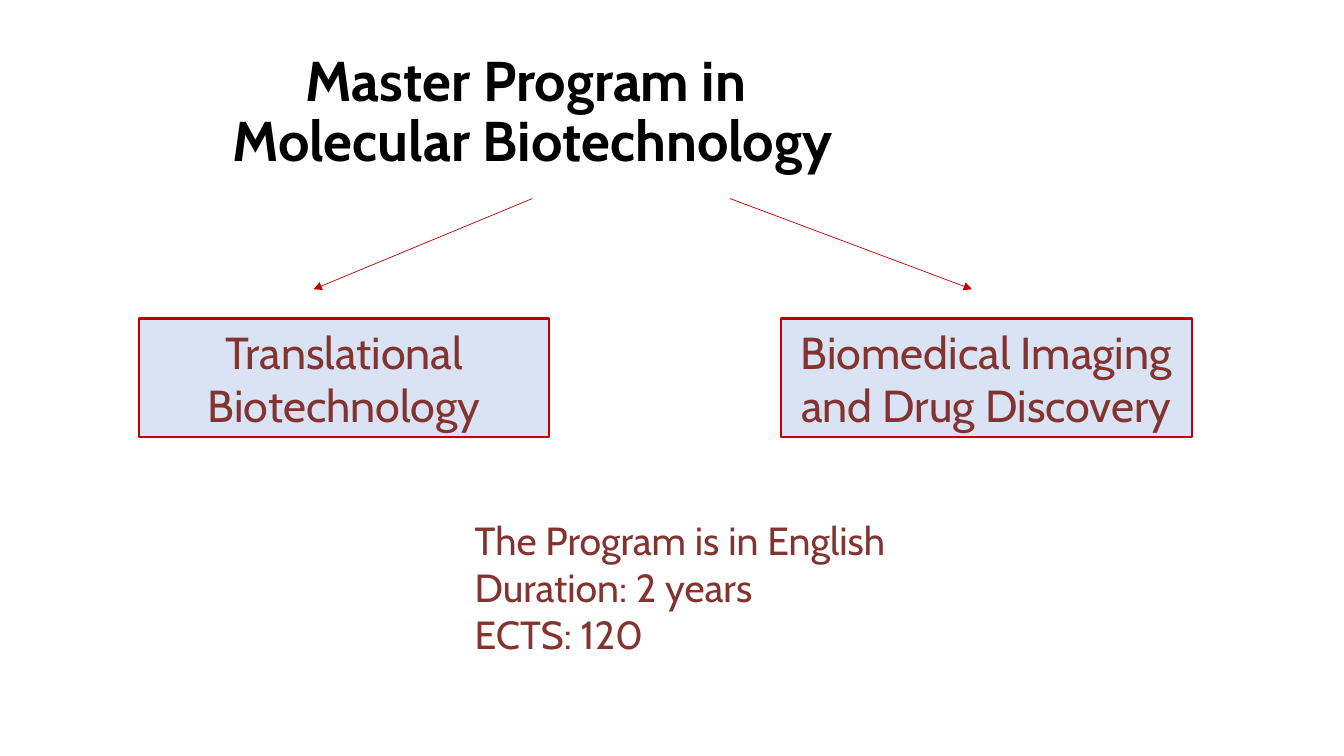
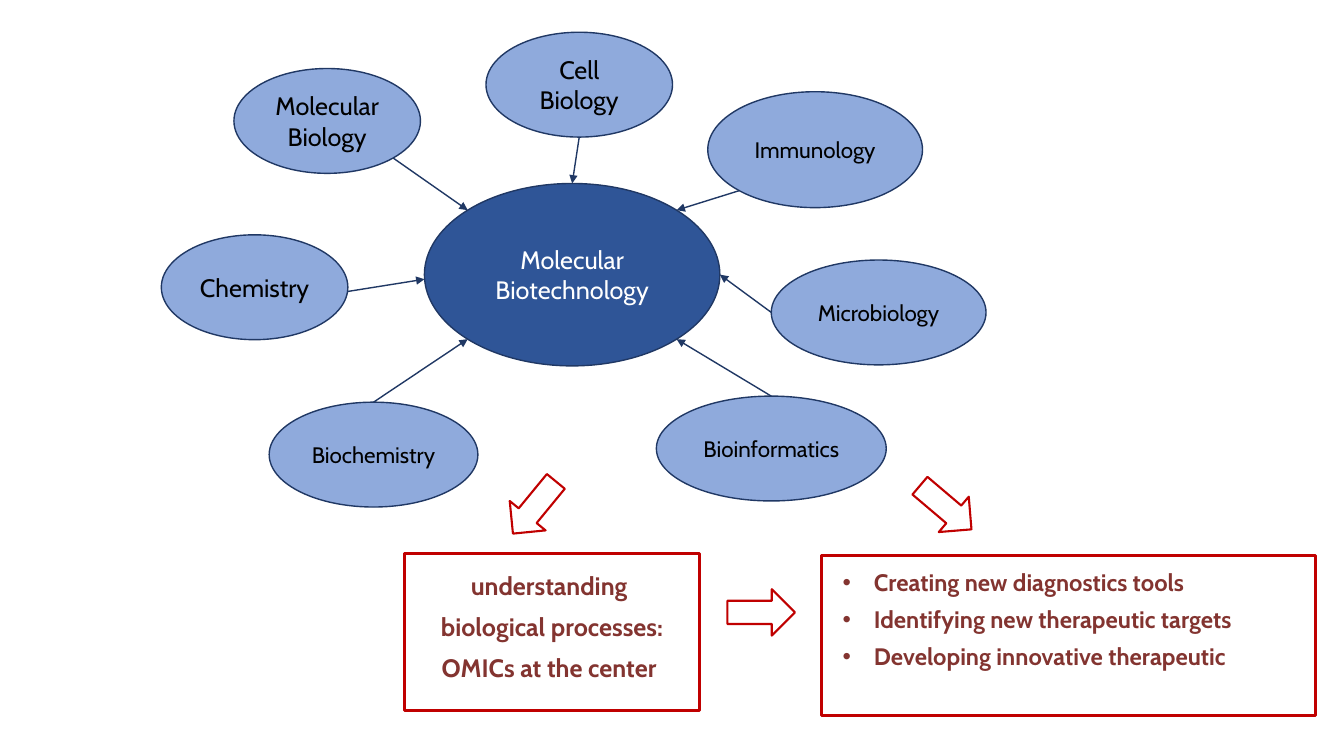
from math import sqrt

from lxml import etree
from pptx import Presentation
from pptx.dml.color import RGBColor
from pptx.enum.shapes import MSO_CONNECTOR, MSO_SHAPE
from pptx.enum.text import MSO_ANCHOR, MSO_AUTO_SIZE, PP_ALIGN
from pptx.oxml.ns import qn
from pptx.util import Inches, Pt

RECT, OVAL, DOWN_ARROW = MSO_SHAPE.RECTANGLE, MSO_SHAPE.OVAL, MSO_SHAPE.DOWN_ARROW
STRAIGHT = MSO_CONNECTOR.STRAIGHT
LEFT, CENTER = PP_ALIGN.LEFT, PP_ALIGN.CENTER
TOP, MIDDLE = MSO_ANCHOR.TOP, MSO_ANCHOR.MIDDLE
NO_FIT = MSO_AUTO_SIZE.NONE
TITLE_ONLY, BLANK = 5, 6

FONT = "Cabin"
BLACK = RGBColor(0x00, 0x00, 0x00)
WHITE = RGBColor(0xFF, 0xFF, 0xFF)
RED = RGBColor(0xC0, 0x00, 0x00)
MAROON = RGBColor(0x83, 0x34, 0x30)
PALE_BLUE = RGBColor(0xDA, 0xE3, 0xF3)
SKY = RGBColor(0x8F, 0xAA, 0xDC)
BLUE = RGBColor(0x2F, 0x55, 0x97)
NAVY = RGBColor(0x20, 0x38, 0x64)

DIAG = sqrt(0.5)


def add_bullet(p, indent):
    pPr = p._p.get_or_add_pPr()
    pPr.set("marL", str(Inches(indent)))
    pPr.set("indent", str(-Inches(indent)))
    etree.SubElement(pPr, qn("a:buFont")).set("typeface", "Arial")
    etree.SubElement(pPr, qn("a:buChar")).set("char", "•")


def write(sp, lines, size, color, bold=False, align=CENTER, anchor=MIDDLE,
          spacing=None, before=0, bullet=None):
    tf = sp.text_frame
    frame = {"word_wrap": True, "auto_size": NO_FIT, "vertical_anchor": anchor}
    for name, value in frame.items():
        setattr(tf, name, value)
    font = {"name": FONT, "size": Pt(size), "bold": bold}
    for i, line in enumerate(lines):
        p = tf.paragraphs[0] if i == 0 else tf.add_paragraph()
        p.text = line
        if bullet:
            add_bullet(p, bullet)
        p.alignment = align
        if spacing:
            p.line_spacing = spacing
        if i and before:
            p.space_before = Pt(before)
        for r in p.runs:
            for name, value in font.items():
                setattr(r.font, name, value)
            r.font.color.rgb = color


def add_text(shapes, box, lines, size, **style):
    sp = shapes.add_textbox(*map(Inches, box))
    write(sp, lines, size, MAROON, anchor=TOP, **style)


def add_box(shapes, kind, box, line, width, fill=None, rotation=0):
    sp = shapes.add_shape(kind, *map(Inches, box))
    sp.shadow.inherit = False
    sp.rotation = rotation
    if fill is None:
        sp.fill.background()
    else:
        sp.fill.solid()
        sp.fill.fore_color.rgb = fill
    sp.line.color.rgb = line
    sp.line.width = Pt(width)
    return sp


def add_arrow(shapes, start, end, color, width):
    cxn = shapes.add_connector(STRAIGHT, *map(Inches, (*start, *end)))
    cxn.line.color.rgb = color
    cxn.line.width = Pt(width)
    etree.SubElement(cxn.line._get_or_add_ln(), qn("a:tailEnd")).set("type", "triangle")
    etree.SubElement(cxn._element.spPr, qn("a:effectLst"))


def rim_point(box, direction):
    x, y, w, h = box
    dx, dy = direction
    return x + w / 2 * (1 + dx), y + h / 2 * (1 + dy)


def add_title(s, box, text):
    title = s.shapes.title
    title.left, title.top, title.width, title.height = map(Inches, box)
    write(title, [text], 40, BLACK, bold=True, spacing=0.9)


def add_tracks(s, box, tracks):
    x, y, w, h = box
    track_w = 4.07
    step = (w - track_w) / (len(tracks) - 1)
    for i, (name, start, end) in enumerate(tracks):
        add_arrow(s.shapes, (x + start, y), (x + end, y + 0.9), RED, 0.5)
        sp = add_box(s.shapes, RECT, (x + i * step, y + h - 1.18, track_w, 1.18),
                     RED, 1.5, PALE_BLUE)
        write(sp, [name], 32, MAROON)


def add_hub(s, box, spokes):
    x, y, w, h = box
    shapes = s.shapes.add_group_shape().shapes
    hub_box = (x + 2.61, y + 1.5, 2.93, 1.81)
    hub = add_box(shapes, OVAL, hub_box, NAVY, 1, BLUE)
    write(hub, ["Molecular Biotechnology"], 18, WHITE)
    for name, size, (dx, dy, sw, sh), leave, arrive in spokes:
        spoke_box = (x + dx, y + dy, sw, sh)
        sp = add_box(shapes, OVAL, spoke_box, NAVY, 1, SKY)
        write(sp, [name], size, BLACK)
        add_arrow(shapes, rim_point(spoke_box, leave), rim_point(hub_box, arrive), NAVY, 1)


def add_outcomes(s, box):
    x, y, w, h = box
    add_box(s.shapes, RECT, (x, y + 0.79, 2.93, 1.56), RED, 2.25)
    add_text(s.shapes, (x, y + 0.94, 2.93, 1.41),
             ["understanding ", "biological processes:", "OMICs at the center "],
             18, bold=True, spacing=0.9, before=10)
    for dx, dy, rotation in ((1.06, 0, 39.4), (5.14, 0, 310.3), (3.31, 1.04, 270)):
        add_box(s.shapes, DOWN_ARROW, (x + dx, y + dy, 0.46, 0.67), RED, 1.5,
                rotation=rotation)
    goals_w = 4.9
    goals_x = x + w - goals_w
    add_box(s.shapes, RECT, (goals_x, y + 0.81, goals_w, 1.59), RED, 2.25)
    add_text(s.shapes, (goals_x + 0.11, y + 0.94, 4.61, 1.31),
             ["Creating new diagnostics tools", "Identifying new therapeutic targets",
              "Developing innovative therapeutic"],
             17, bold=True, align=LEFT, spacing=0.8, before=10, bullet=0.31)


def program_slide(prs):
    s = prs.slides.add_slide(prs.slide_layouts[TITLE_ONLY])
    add_title(s, (0.92, 0.4, 8.72, 1.45), "Master Program in \vMolecular Biotechnology")
    add_tracks(s, (1.38, 1.97, 10.44, 2.37), [
        ("Translational Biotechnology", 3.9, 1.73),
        ("Biomedical Imaging and Drug Discovery", 5.86, 8.26),
    ])
    add_text(s.shapes, (4.61, 5.07, 4.71, 1.51),
             ["The Program is in English", "Duration: 2 years", "ECTS: 120"],
             28, align=LEFT)


def fields_slide(prs):
    s = prs.slides.add_slide(prs.slide_layouts[BLANK])
    add_hub(s, (1.6, 0.32, 8.18, 4.71), [
        ("Molecular Biology", 18, (0.72, 0.36, 1.85, 1.04), (DIAG, DIAG), (-DIAG, -DIAG)),
        ("Cell Biology", 18, (3.22, 0, 1.85, 1.04), (0, 1), (0, -1)),
        ("Chemistry", 18, (0, 2.01, 1.85, 1.04), (1, 0.08), (-1, 0.05)),
        ("Biochemistry", 16, (1.07, 3.67, 2.07, 1.04), (0, -1), (-DIAG, DIAG)),
        ("Immunology", 16, (5.42, 0.59, 2.13, 1.15), (-DIAG, DIAG), (DIAG, -DIAG)),
        ("Microbiology", 16, (6.05, 2.26, 2.13, 1.04), (-1, 0), (1, 0)),
        ("Bioinformatics", 16, (4.91, 3.61, 2.28, 1.04), (0, -1), (DIAG, DIAG)),
    ])
    add_outcomes(s, (4.01, 4.7, 9.04, 2.4))


def main():
    prs = Presentation()
    prs.slide_width, prs.slide_height = Inches(13.33), Inches(7.5)
    program_slide(prs)
    fields_slide(prs)
    prs.save("out.pptx")


if __name__ == "__main__":
    main()
